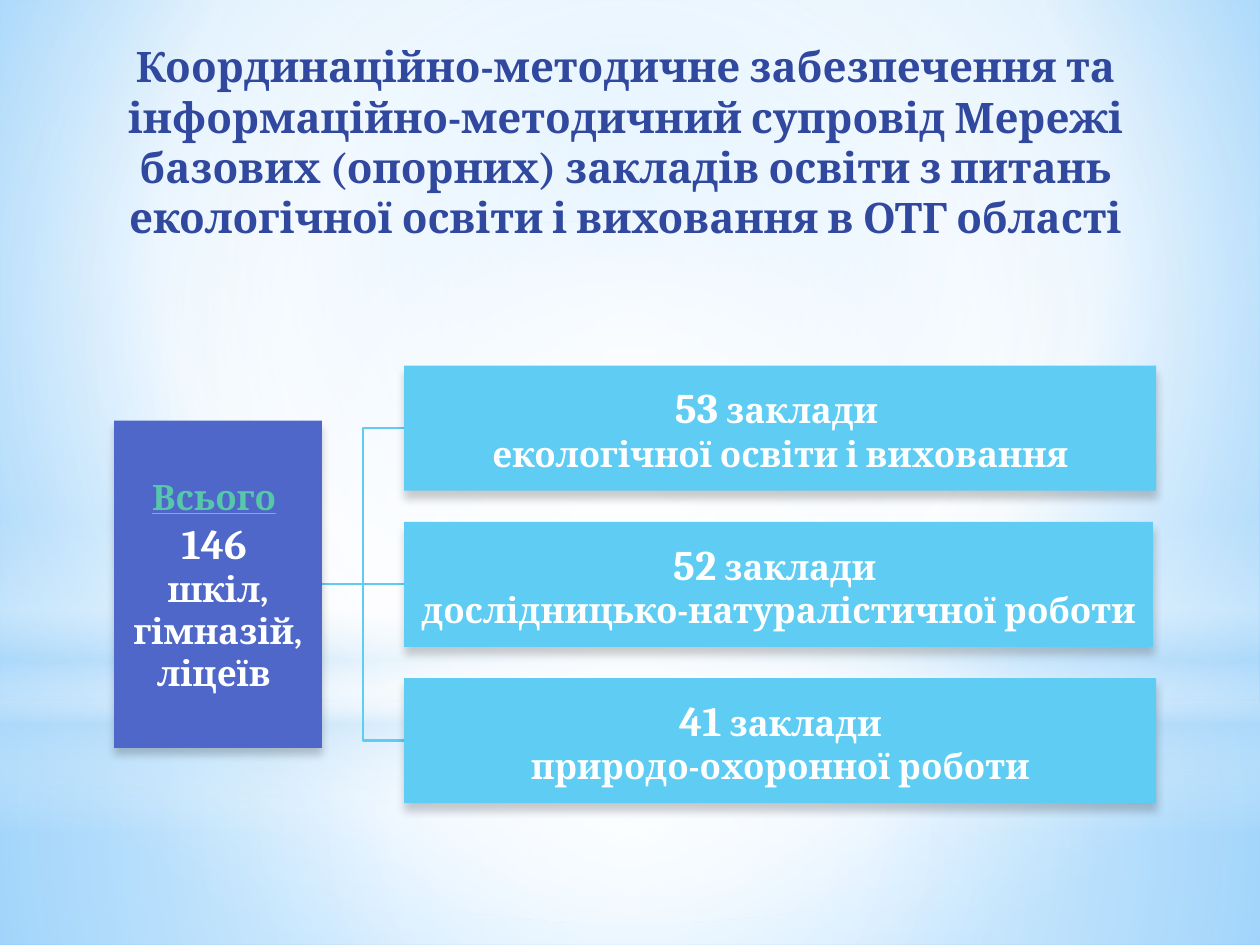
from typing import NamedTuple

from lxml import etree
from pptx import Presentation
from pptx import util as u
from pptx.dml.color import RGBColor
from pptx.enum import shapes, text
from pptx.oxml import parse_xml
from pptx.oxml.ns import nsdecls, qn

HUES = {"title": "31489F", "total": "4E67C8", "sky": "5ECCF3",
        "mint": "56C7AA", "white": "FFFFFF", "pale": "B4DCFA",
        "rim": "5BB9FF", "core": "9ED5FF", "black": "000000"}
FONT = "Cambria"


class Stop(NamedTuple):
    pos: int
    hue: str
    alpha: int = 100


class Glow(NamedTuple):
    form: int
    top: float
    high: float
    stops: list
    mode: str


class Run(NamedTuple):
    words: str
    size: int = 20
    hue: str = "white"
    line: bool = False


class Box(NamedTuple):
    left: float
    top: float
    wide: float
    high: float
    hue: str
    pad: float
    paras: list


def paint(item, stops: list, mode: str) -> None:
    """Swap the solid fill of a shape or slide for a gradient."""
    marks = "".join(
        f'<a:gs pos="{s.pos * 1000}"><a:srgbClr val="{HUES[s.hue]}">'
        f'<a:alpha val="{s.alpha * 1000}"/></a:srgbClr></a:gs>' for s in stops)
    old = item.element.find(".//" + qn("a:solidFill"))
    old.getparent().replace(old, parse_xml(
        f'<a:gradFill {nsdecls("a")} rotWithShape="1">'
        f'<a:gsLst>{marks}</a:gsLst>{mode}</a:gradFill>'))


def round_to(left: int, top: int, right: int, base: int) -> str:
    return (f'<a:path path="circle"><a:fillToRect l="{left * 1000}" t="{top * 1000}" '
            f'r="{right * 1000}" b="{base * 1000}"/></a:path>')


def shade(shape) -> None:
    """Give a shape its soft shadow below."""
    shape.shadow.inherit = False
    cast = etree.SubElement(
        shape.element.spPr.find(qn("a:effectLst")), qn("a:outerShdw"),
        blurRad=str(u.Pt(5)), dist=str(u.Pt(4)), dir="5400000",
        algn="ctr", rotWithShape="0")
    tone = etree.SubElement(cast, qn("a:srgbClr"), val=HUES["black"])
    etree.SubElement(tone, qn("a:alpha"), val="20000")


def write(frame, paras: list, pad: float, side: float) -> None:
    frame.word_wrap = True
    frame.margin_left = frame.margin_right = u.Cm(side)
    frame.margin_top = frame.margin_bottom = u.Cm(pad)
    for i, runs in enumerate(paras):
        para = frame.add_paragraph() if i else frame.paragraphs[0]
        para.alignment = text.PP_ALIGN.CENTER
        for part in runs:
            run = para.add_run()
            run.text = part.words
            font = run.font
            font.name, font.size, font.bold = FONT, u.Pt(part.size), True
            font.underline = part.line
            font.color.rgb = RGBColor.from_string(HUES[part.hue])


def draw_glow(slide, glow: Glow) -> None:
    shape = slide.shapes.add_shape(glow.form, 0, u.Cm(glow.top),
                                   u.Cm(25.4), u.Cm(glow.high))
    shape.shadow.inherit = False
    shape.line.fill.background()
    shape.fill.solid()
    paint(shape, glow.stops, glow.mode)


def draw_box(slide, box: Box) -> None:
    shape = slide.shapes.add_shape(RECT, *(u.Cm(n) for n in box[:4]))
    shape.fill.solid()
    shape.fill.fore_color.rgb = RGBColor.from_string(HUES[box.hue])
    shape.line.fill.background()
    shade(shape)
    shape.text_frame.vertical_anchor = text.MSO_ANCHOR.MIDDLE
    write(shape.text_frame, box.paras, box.pad, box.pad)


def draw_link(slide, start: tuple, end: tuple) -> None:
    """Join two points, with a bend halfway if they differ in height."""
    (x, y), (far, drop) = start, end
    if abs(y - drop) < 0.05:
        link = slide.shapes.add_connector(
            shapes.MSO_CONNECTOR.STRAIGHT, *(u.Cm(n) for n in (x, y, far, y)))
        etree.SubElement(link.element.spPr, qn("a:effectLst"))
    else:
        half = (x + far) / 2
        pen = slide.shapes.build_freeform(u.Cm(x), u.Cm(y))
        pen.add_line_segments([(u.Cm(a), u.Cm(b)) for a, b in
                               ((half, y), (half, drop), (far, drop))], close=False)
        link = pen.convert_to_shape()
        link.fill.background()
        link.shadow.inherit = False
    link.line.color.rgb = RGBColor.from_string(HUES["sky"])
    link.line.width = u.Pt(1.25)


RECT = shapes.MSO_SHAPE.RECTANGLE
MID = round_to(50, 50, 50, 50)
GLOWS = [
    Glow(RECT, 14.17, 4.88, [Stop(0, "white", 91), Stop(37, "white", 76),
                             Stop(100, "pale", 79)], MID),
    Glow(RECT, 0, 14.17, [Stop(0, "white", 89), Stop(48, "white", 62),
                          Stop(100, "pale", 79)], MID),
    Glow(RECT, 10.46, 6.35, [Stop(0, "white", 0), Stop(29, "white", 30),
                             Stop(45, "pale", 40), Stop(55, "white", 26),
                             Stop(65, "pale", 60), Stop(100, "white", 0)],
         '<a:lin ang="5400000" scaled="0"/>'),
    Glow(shapes.MSO_SHAPE.OVAL, 4.45, 14.17,
         [Stop(0, "white"), Stop(56, "white", 0)], MID),
]
TITLE = ("Координаційно-методичне забезпечення та інформаційно-методичний "
         "супровід Мережі базових (опорних) закладів освіти з питань "
         "екологічної освіти і виховання в ОТГ області")
TOTAL = Box(2.3, 8.48, 4.19, 6.6, "total", 0.03, [
    [Run("Всього", hue="mint", line=True), Run(" ")],
    [Run("146", 24), Run(" ")],
    [Run("шкіл, гімназій, ліцеїв ")]])
GROUPS = [("53", " заклади ", "екологічної освіти і виховання", 15.16),
          ("52", " заклади ", "дослідницько-натуралістичної роботи", 15.09),
          ("41", " заклади", "природо-охоронної роботи", 15.16)]
LEFT, TOP, HIGH, STEP = 8.15, 7.37, 2.52, 3.15


def main() -> None:
    deck = Presentation()
    deck.slide_width, deck.slide_height = u.Cm(25.4), u.Cm(19.05)
    slide = deck.slides.add_slide(deck.slide_layouts[6])

    # Background and its light layers
    slide.background.fill.solid()
    paint(slide, [Stop(0, "core"), Stop(60, "white"), Stop(100, "rim")],
          round_to(20, 10, 20, 60))
    for glow in GLOWS:
        draw_glow(slide, glow)

    # Title
    head = slide.shapes.add_textbox(*(u.Cm(n) for n in (0.71, 0.69, 23.8, 4.45)))
    write(head.text_frame, [[Run(TITLE, 24, "title")]], 0.13, 0.25)

    # Tree: links first, then boxes over them
    boxes = [Box(LEFT, TOP + i * STEP, wide, HIGH, "sky", 0.05,
                 [[Run(count, 24), Run(noun)], [Run(topic)]])
             for i, (count, noun, topic, wide) in enumerate(GROUPS)]
    start = (TOTAL.left + TOTAL.wide, TOTAL.top + TOTAL.high / 2)
    for box in boxes:
        draw_link(slide, start, (box.left, box.top + box.high / 2))
    for box in [TOTAL, *boxes]:
        draw_box(slide, box)

    deck.save("out.pptx")


if __name__ == "__main__":
    main()
